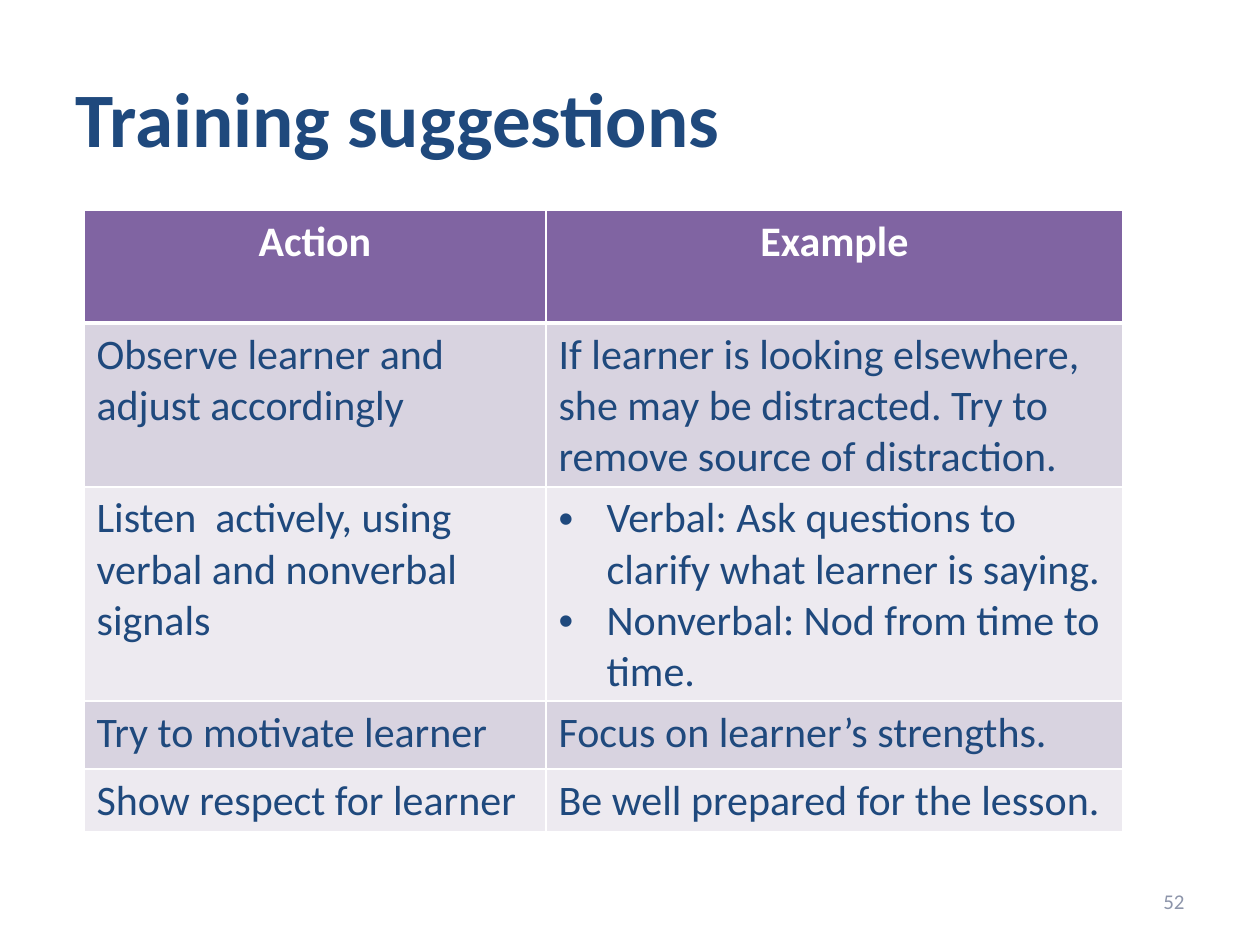
import pptx
import pptx.util
from lxml import etree
from pptx.dml.color import RGBColor
from pptx.enum.text import MSO_ANCHOR, PP_ALIGN
from pptx.oxml.ns import qn

EMU_PER_PX = 914400 / 126
FONT = "Calibri"
NAVY = RGBColor(0x1F, 0x49, 0x7D)
GREY = RGBColor(0x8D, 0x95, 0xAA)
WHITE = RGBColor(0xFF, 0xFF, 0xFF)
PURPLE = RGBColor(0x80, 0x64, 0xA2)
BANDS = [RGBColor(0xD8, 0xD3, 0xE0), RGBColor(0xED, 0xEA, 0xF0)]

COLUMN_WIDTHS = [462, 577]
ROW_HEIGHTS = [113, 151, 207, 68, 63]
BULLET_INDENT = 48
# A list in a cell becomes bulleted paragraphs.
ROWS = [
    ("Action", "Example"),
    ("Observe learner and adjust accordingly",
     "If learner is looking elsewhere, she may be distracted. "
     "Try to remove source of distraction."),
    ("Listen  actively, using verbal and nonverbal signals",
     ["Verbal: Ask questions to clarify what learner is saying.",
      "Nonverbal: Nod from time to time."]),
    ("Try to motivate learner", "Focus on learner’s strengths."),
    ("Show respect for learner", "Be well prepared for the lesson."),
]


def px(length):
    return pptx.util.Emu(round(length * EMU_PER_PX))


def style(para, size, color, bold=False, align=PP_ALIGN.LEFT):
    para.alignment = align
    para.font.name = FONT
    para.font.size = pptx.util.Pt(size)
    para.font.bold = bold
    para.font.color.rgb = color


def add_line_of_text(page, box, text, **look):
    frame = page.shapes.add_textbox(*map(px, box)).text_frame
    frame.word_wrap = True
    frame.vertical_anchor = MSO_ANCHOR.MIDDLE
    frame.text = text
    style(frame.paragraphs[0], **look)


def add_bullet(para):
    """Give the paragraph a round bullet and a hanging indent."""
    props = para._p.get_or_add_pPr()
    props.set("marL", str(px(BULLET_INDENT)))
    props.set("indent", str(-px(BULLET_INDENT)))
    font = etree.Element(qn("a:buFont"), typeface="Arial")
    mark = etree.Element(qn("a:buChar"), char="•")
    props.insert(0, font)
    font.addnext(mark)


def add_borders(cell, top, bottom):
    """Draw white borders; call before the fill, which must follow them."""
    props = cell._tc.get_or_add_tcPr()
    for side, points in (("L", 1), ("R", 1), ("T", top), ("B", bottom)):
        line = etree.SubElement(props, qn(f"a:ln{side}"), w=str(pptx.util.Pt(points)))
        fill = etree.SubElement(line, qn("a:solidFill"))
        etree.SubElement(fill, qn("a:srgbClr"), val=str(WHITE))


def fill_cell(cell, content, row):
    header = row == 0
    add_borders(cell, top=3 if row == 1 else 1, bottom=3 if header else 1)
    cell.fill.solid()
    cell.fill.fore_color.rgb = PURPLE if header else BANDS[(row - 1) % 2]
    bulleted = isinstance(content, list)
    cell.text = "\n".join(content) if bulleted else content
    for para in cell.text_frame.paragraphs:
        style(para, 24, WHITE if header else NAVY, header,
              PP_ALIGN.CENTER if header else PP_ALIGN.LEFT)
        if bulleted:
            add_bullet(para)


def add_suggestions(page, left, top):
    box = (left, top, sum(COLUMN_WIDTHS), sum(ROW_HEIGHTS))
    table = page.shapes.add_table(len(ROWS), len(COLUMN_WIDTHS), *map(px, box)).table
    for column, width in zip(table.columns, COLUMN_WIDTHS):
        column.width = px(width)
    for row, height in enumerate(ROW_HEIGHTS):
        table.rows[row].height = px(height)
        for column, content in enumerate(ROWS[row]):
            fill_cell(table.cell(row, column), content, row)


def main():
    deck = pptx.Presentation()
    deck.slide_width, deck.slide_height = px(1260), px(945)
    page = deck.slides.add_slide(deck.slide_layouts[6])
    add_line_of_text(page, (63, 38, 1134, 158), "Training suggestions",
                     size=44, color=NAVY, bold=True)
    add_suggestions(page, 84, 210)
    add_line_of_text(page, (903, 876, 294, 50), "52",
                     size=12, color=GREY, align=PP_ALIGN.RIGHT)
    deck.save("out.pptx")


if __name__ == "__main__":
    main()
